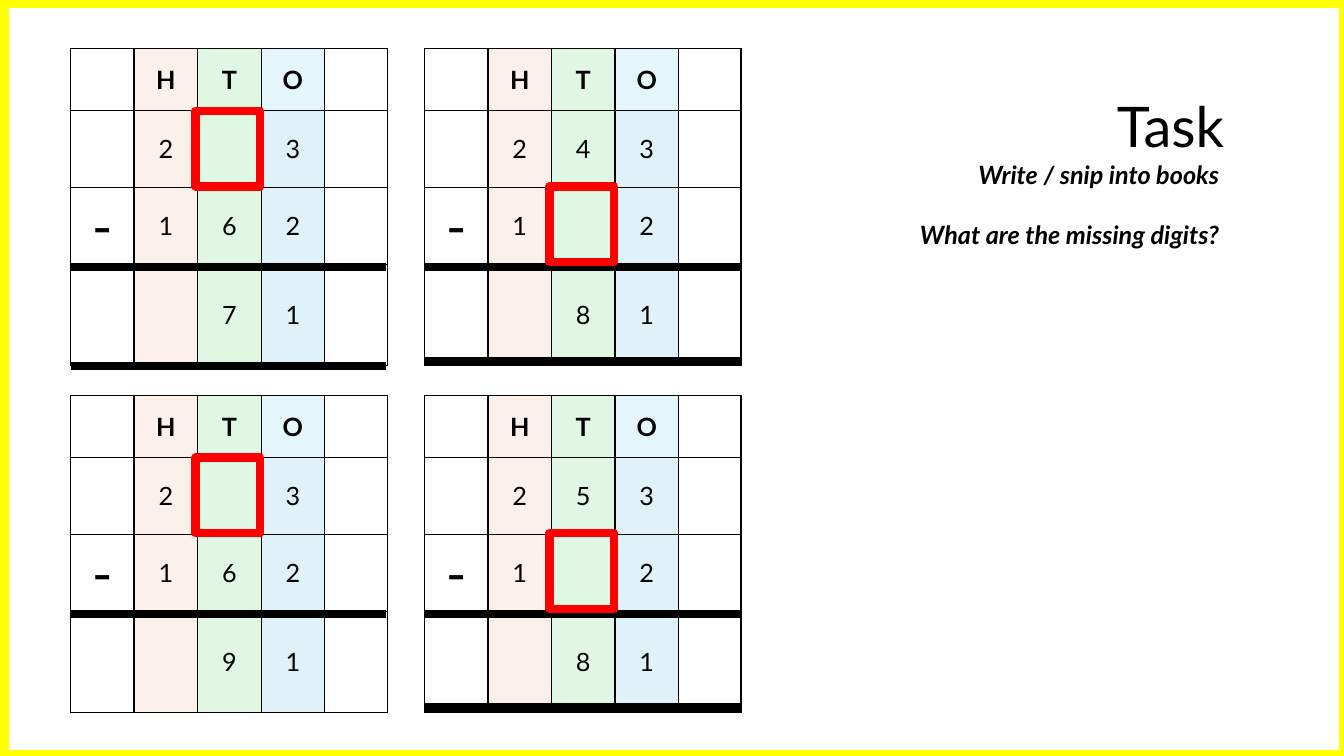
from dataclasses import dataclass
from typing import Optional

from lxml import etree
from pptx import Presentation
from pptx.dml.color import RGBColor
from pptx.enum.shapes import MSO_CONNECTOR, MSO_SHAPE
from pptx.enum.text import MSO_ANCHOR, MSO_AUTO_SIZE, PP_ALIGN
from pptx.oxml.ns import qn
from pptx.util import Inches, Pt

RECTANGLE = MSO_SHAPE.RECTANGLE
STRAIGHT = MSO_CONNECTOR.STRAIGHT
CENTER, RIGHT = PP_ALIGN.CENTER, PP_ALIGN.RIGHT
TOP, MIDDLE = MSO_ANCHOR.TOP, MSO_ANCHOR.MIDDLE
GROW = MSO_AUTO_SIZE.SHAPE_TO_FIT_TEXT

FONT = "Lato"
BLACK, YELLOW, RED = "000000", "FFFF00", "FF0000"
HUNDREDS, TENS, ONES, ONES_HEADER = "FBE3D6", "C2F1C8", "C1E5F5", "CAEEFB"

COLUMN_WIDTHS = [0.63, 0.63, 0.63, 0.63, 0.62]
ROW_HEIGHTS = [0.62, 0.76, 0.7, 1]
GRID_WIDTH, GRID_HEIGHT = 3.13, 3.15
SUM_LINE = 2.17
MISSING_LEFT, MISSING_WIDTH, MISSING_HEIGHT = 1.24, 0.64, 0.75


@dataclass
class Subtraction:
    left: float
    top: float
    rows: list[str]  # sign, hundreds, tens, ones, spare column
    missing_row: int
    answer_line: Optional[float]  # distance below the top of the grid


SUBTRACTIONS = [
    Subtraction(0.7, 0.48, [" HTO ", " 2 3 ", "-162 ", "  71 "], 1, 3.15),
    Subtraction(4.21, 0.48, [" HTO ", " 243 ", "-1 2 ", "  81 "], 2, 3.1),
    Subtraction(0.7, 3.92, [" HTO ", " 2 3 ", "-162 ", "  91 "], 1, None),
    Subtraction(4.21, 3.92, [" HTO ", " 253 ", "-1 2 ", "  81 "], 2, 3.1),
]


def rgb(value: str) -> RGBColor:
    return RGBColor.from_string(value)


def style_text(paragraph, size: float, align, bold=False, italic=False) -> None:
    paragraph.alignment = align
    for run in paragraph.runs:
        font = run.font
        font.name, font.size = FONT, Pt(size)
        font.bold, font.italic = bold, italic
        font.color.rgb = rgb(BLACK)


def add_frame(slide, left: float, top: float, width: float, height: float,
              color: str, weight: float) -> None:
    frame = slide.shapes.add_shape(RECTANGLE, Inches(left), Inches(top),
                                   Inches(width), Inches(height))
    frame.shadow.inherit = False
    frame.fill.background()
    frame.line.color.rgb = rgb(color)
    frame.line.width = Pt(weight)


def add_rule(slide, left: float, top: float) -> None:
    rule = slide.shapes.add_connector(STRAIGHT, Inches(left), Inches(top),
                                      Inches(left + GRID_WIDTH), Inches(top))
    rule.line.color.rgb = rgb(BLACK)
    rule.line.width = Pt(6)
    etree.SubElement(rule._element.spPr, qn("a:effectLst"))


def fill_cell(cell, color: Optional[str]) -> None:
    if color is None:
        cell.fill.background()
        return
    cell.fill.solid()
    cell.fill.fore_color.rgb = rgb(color)
    shade = cell._tc.tcPr.find(".//" + qn("a:srgbClr"))
    etree.SubElement(shade, qn("a:alpha"), val="50000")


def border_cell(cell) -> None:
    for position, side in enumerate(("a:lnL", "a:lnR", "a:lnT", "a:lnB")):
        edge = etree.Element(qn(side), w=str(Pt(1)))
        solid = etree.SubElement(edge, qn("a:solidFill"))
        etree.SubElement(solid, qn("a:srgbClr"), val=BLACK)
        cell._tc.tcPr.insert(position, edge)


def add_grid(slide, sum_: Subtraction) -> None:
    grid = slide.shapes.add_table(
        len(ROW_HEIGHTS), len(COLUMN_WIDTHS), Inches(sum_.left),
        Inches(sum_.top), Inches(GRID_WIDTH), Inches(GRID_HEIGHT)).table
    grid.first_row = grid.horz_banding = False
    for column, width in zip(grid.columns, COLUMN_WIDTHS):
        column.width = Inches(width)
    for r, (digits, height) in enumerate(zip(sum_.rows, ROW_HEIGHTS)):
        grid.rows[r].height = Inches(height)
        ones = ONES_HEADER if r == 0 else ONES
        colors = [None, HUNDREDS, TENS, ones, None]
        for c, (digit, color) in enumerate(zip(digits, colors)):
            cell = grid.cell(r, c)
            fill_cell(cell, color)
            border_cell(cell)
            if digit != " ":
                cell.text_frame.text = digit
                cell.vertical_anchor = MIDDLE
                style_text(cell.text_frame.paragraphs[0],
                           40 if digit == "-" else 18, CENTER, bold=r == 0)
    add_rule(slide, sum_.left, sum_.top + SUM_LINE)
    if sum_.answer_line is not None:
        add_rule(slide, sum_.left, sum_.top + sum_.answer_line)


def add_heading(slide) -> None:
    task = slide.shapes.title
    task.left, task.top = Inches(10.97), Inches(0.86)
    task.width, task.height = Inches(1.27), Inches(0.77)
    task.text_frame.text = "Task"
    task.text_frame.vertical_anchor = TOP
    style_text(task.text_frame.paragraphs[0], 40, RIGHT)

    instructions = slide.shapes.add_textbox(Inches(8.78), Inches(1.53),
                                            Inches(3.41), Inches(1.01))
    instructions.text_frame.text = "Write / snip into books\nWhat are the missing digits?"
    for paragraph in instructions.text_frame.paragraphs:
        style_text(paragraph, 18, RIGHT, bold=True, italic=True)
    instructions.text_frame.paragraphs[1].space_before = Pt(21.6)

    for frame in (task.text_frame, instructions.text_frame):
        frame.word_wrap = False
        frame.auto_size = GROW


def main() -> None:
    deck = Presentation()
    deck.slide_width, deck.slide_height = Inches(13.33), Inches(7.5)
    slide = deck.slides.add_slide(deck.slide_layouts[5])

    # Heading and page border
    add_heading(slide)
    add_frame(slide, 0.02, 0.01, 13.33, 7.5, YELLOW, 10)

    # Column subtractions
    for sum_ in SUBTRACTIONS:
        add_grid(slide, sum_)

    # Boxes for the missing digits
    for sum_ in SUBTRACTIONS:
        top = sum_.top + ROW_HEIGHTS[0] + (sum_.missing_row - 1) * MISSING_HEIGHT
        add_frame(slide, sum_.left + MISSING_LEFT, top,
                  MISSING_WIDTH, MISSING_HEIGHT, RED, 6)

    deck.save("out.pptx")


if __name__ == "__main__":
    main()
